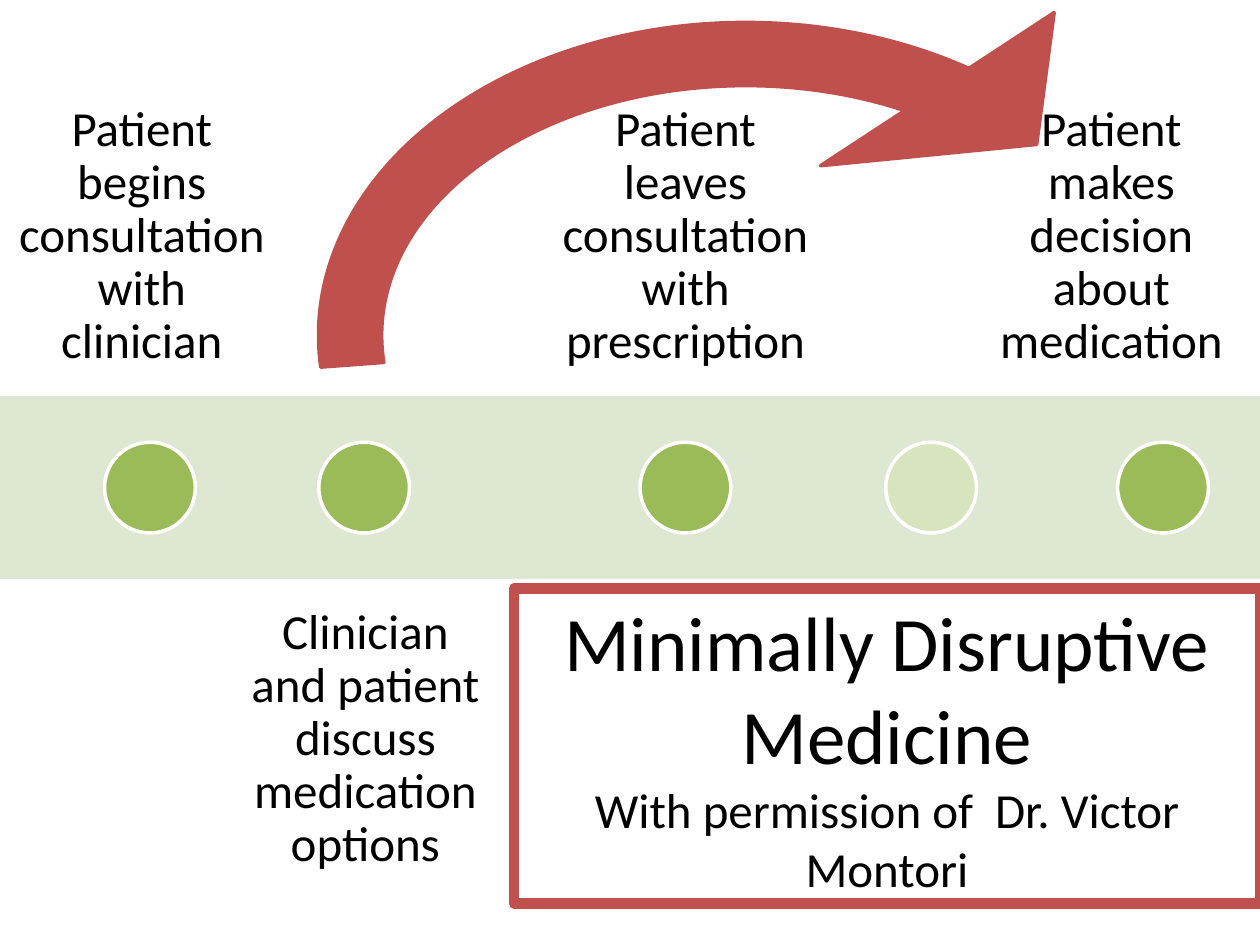
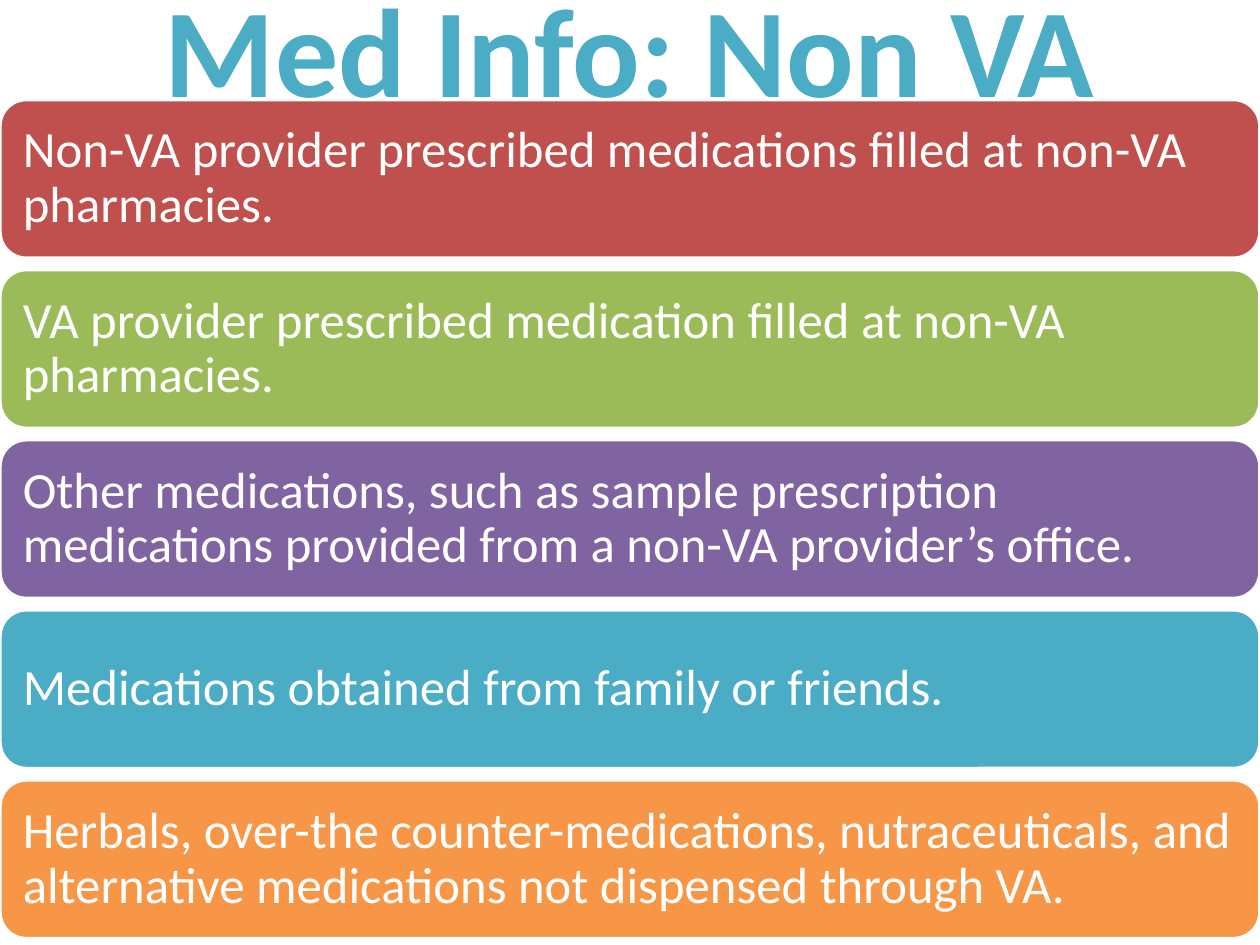
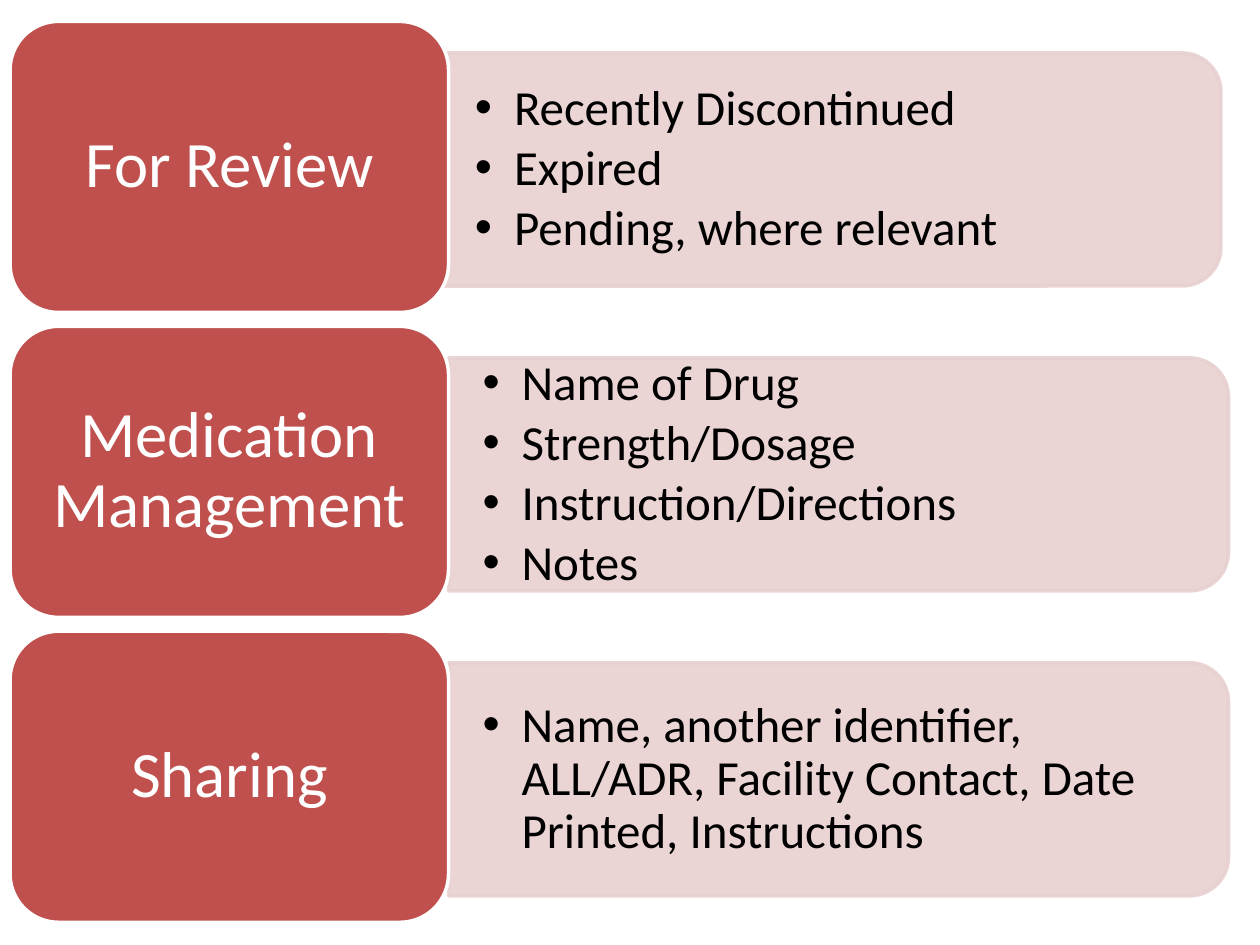
from lxml.etree import SubElement as Sub
from pptx import Presentation
from pptx.dml.color import RGBColor as RGB
from pptx.enum.shapes import MSO_SHAPE as Kind
from pptx.enum.text import MSO_ANCHOR as Anchor, PP_ALIGN as Align
from pptx.oxml.ns import qn
from pptx.util import Pt

PX = 9144  # 100 px to the inch
FONT = "Calibri"
HUES = {
    "red": "C0504D", "green": "9BBB59", "violet": "8064A2", "teal": "4BACC6",
    "orange": "F79646", "band": "DEE7D1", "pale": "D7E4BD", "rose": "E8D0D0",
    "white": "FFFFFF", "black": "000000",
}


def draw(slide, kind, spot, fill, line=None, width=2):
    """Add a preset shape, or a text box when kind is None."""
    area = [n * PX for n in spot]
    if kind is None:
        return slide.shapes.add_textbox(*area)
    shape = slide.shapes.add_shape(kind, *area)
    shape.shadow.inherit = False
    shape.fill.solid()
    shape.fill.fore_color.rgb = RGB.from_string(HUES[fill])
    if line:
        shape.line.color.rgb = RGB.from_string(HUES[line])
        shape.line.width = Pt(width)
    else:
        shape.line.fill.background()
    return shape


def write(shape, *lines, sizes=(28,), hue="black", bold=False, align=Align.CENTER,
          anchor=Anchor.MIDDLE, pad=(10, 5), lead=0.9, bullet=False):
    """Fill a shape with paragraphs; the last size serves all further lines."""
    frame = shape.text_frame
    frame.word_wrap = True
    frame.vertical_anchor = anchor
    frame.margin_left = frame.margin_right = pad[0] * PX
    frame.margin_top = frame.margin_bottom = pad[1] * PX
    for i, line in enumerate(lines):
        para = frame.add_paragraph() if i else frame.paragraphs[0]
        para.alignment = align
        para.line_spacing = lead
        run = para.add_run()
        run.text = line
        run.font.name = FONT
        run.font.size = Pt(sizes[min(i, len(sizes) - 1)])
        run.font.bold = bold
        run.font.color.rgb = RGB.from_string(HUES[hue])
        if bullet:
            para.space_after = Pt(4)
            props = para._p.get_or_add_pPr()
            props.set("marL", str(31 * PX))
            props.set("indent", str(-31 * PX))
            Sub(props, qn("a:buFont"), typeface="Arial")
            Sub(props, qn("a:buChar"), char="•")


deck = Presentation()
deck.slide_width, deck.slide_height = 1000 * PX, 750 * PX
blank = deck.slide_layouts[6]

# Slide 1: timeline
slide = deck.slides.add_slide(blank)
draw(slide, Kind.NOTCHED_RIGHT_ARROW, (-83, 242, 1250, 290), "band")

steps = [
    (-11, 247, "Patient begins consultation with clinician", True),
    (170, 240, "Clinician and patient discuss medication options", False),
    (415, 258, "Patient leaves consultation with prescription", True),
    (764, 236, "Patient makes decision about medication", True),
]
for left, width, label, above in steps:
    note = draw(slide, None, (left, 25 if above else 460, width, 290), None)
    write(note, label, pad=(22, 22), anchor=Anchor.BOTTOM if above else Anchor.TOP)

for left, hue in [(83, "green"), (253, "green"), (508, "green"),
                  (703, "pale"), (887, "green")]:
    draw(slide, Kind.OVAL, (left, 351, 72, 72), hue, "white")

# Title box and the arrow over the timeline
title = draw(slide, Kind.RECTANGLE, (408, 467, 592, 250), "white", "red", 6)
write(title, "Minimally Disruptive Medicine", "With permission of  Dr. Victor Montori",
      sizes=(44, 28), lead=1.0)
arc = draw(slide, Kind.CIRCULAR_ARROW, (167, -68, 850, 668), "red", "red")
for i, value in enumerate((0.075, 11.312, 184.737, 105.416, 0.166)):
    arc.adjustments[i] = value

# Slide 2: stacked bars
slide = deck.slides.add_slide(blank)
bars = [
    ("red", "Non-VA provider prescribed medications filled at non-VA pharmacies."),
    ("green", "VA provider prescribed medication filled at non-VA pharmacies."),
    ("violet", "Other medications, such as sample prescription medications provided "
               "from a non-VA provider’s office."),
    ("teal", "Medications obtained from family or friends."),
    ("orange", "Herbals, over-the counter-medications, nutraceuticals, and alternative "
               "medications not dispensed through VA."),
]
for i, (hue, label) in enumerate(bars):
    bar = draw(slide, Kind.ROUNDED_RECTANGLE, (0, 79 + 135 * i, 1000, 126), hue, "white")
    write(bar, label, sizes=(29,), hue="white", align=Align.LEFT, pad=(12, 12))

title = draw(slide, None, (50, -25, 900, 125), None)
write(title, "Med Info: Non VA", sizes=(72,), hue="teal", bold=True, lead=1.0)

# Slide 3: cards with bullet panels
slide = deck.slides.add_slide(blank)
rows = [
    ("For Review", -6, ["Recently Discontinued", "Expired", "Pending, where relevant"]),
    ("Medication Management", 0,
     ["Name of Drug", "Strength/Dosage", "Instruction/Directions", "Notes"]),
    ("Sharing", 0, ["Name, another identifier, ALL/ADR, Facility Contact, "
                    "Date Printed, Instructions"]),
]
for i, (name, shift, points) in enumerate(rows):
    top = 242 * i
    panel = draw(slide, Kind.ROUND_2_SAME_RECTANGLE, (573 + shift, top - 175, 185, 619),
                 "rose", "rose")
    panel.rotation = 90
    for tint in panel._element.spPr.iter(qn("a:srgbClr")):
        Sub(tint, qn("a:alpha"), val="90000")
    body = draw(slide, None, (356 + shift, top + 51, 610, 167), None)
    write(body, *points, align=Align.LEFT, pad=(27, 14), bullet=True)
    card = draw(slide, Kind.ROUNDED_RECTANGLE, (8, top + 17, 348, 231), "red", "white")
    write(card, name, sizes=(37,), hue="white", pad=(15, 8))

deck.save("out.pptx")
